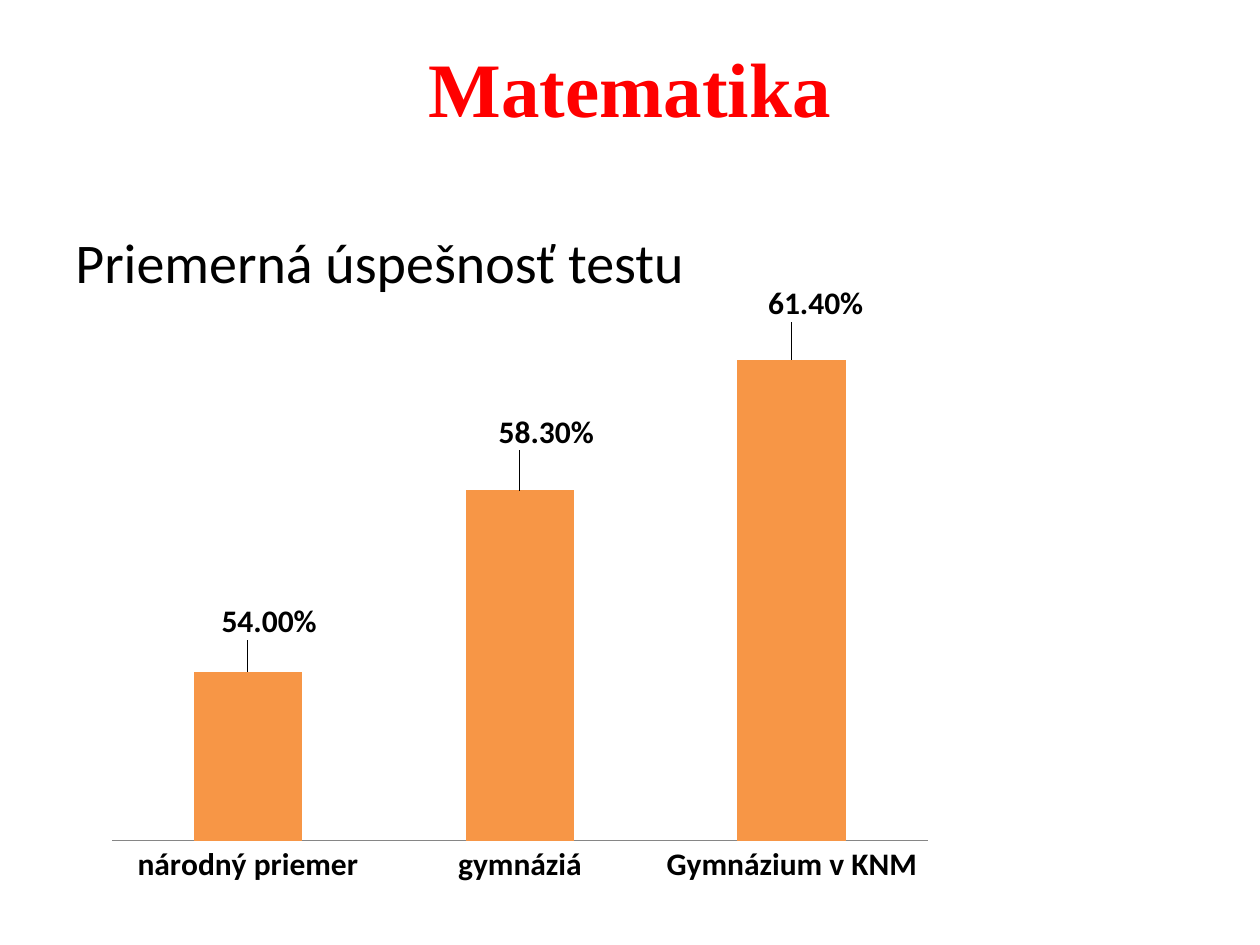
from pptx import Presentation
from pptx.chart.data import CategoryChartData
from pptx.dml.color import RGBColor
from pptx.enum.chart import XL_CHART_TYPE as Kind, XL_LABEL_POSITION as Pos, XL_TICK_MARK as Tick
from pptx.enum.text import MSO_ANCHOR as Anchor, PP_ALIGN as Align
from pptx.oxml import parse_xml
from pptx.oxml.ns import nsdecls, qn
from pptx.util import Pt

PX = 914400 // 126
FORMAT = "0.00%"


def px(*sizes):
    return [size * PX for size in sizes]


def ink(code):
    return RGBColor.from_string(code)


def style(font, name, size, color, bold=False):
    font.name, font.size, font.bold = name, Pt(size), bold
    font.color.rgb = ink(color)


def text(slide, box, words, name, size, color, bold=False,
         align=Align.LEFT, anchor=Anchor.TOP, top=6):
    frame = slide.shapes.add_textbox(*px(*box)).text_frame
    frame.word_wrap = True
    frame.vertical_anchor = anchor
    frame.margin_top = top * PX
    para = frame.paragraphs[0]
    para.text, para.alignment = words, align
    style(para.font, name, size, color, bold)


def layout(x, y, size=None):
    """Manual chart layout; a size makes it the inner plot area."""
    parts = [("x", x), ("y", y)]
    if size:
        parts = [("layoutTarget", "inner"), ("xMode", "edge"),
                 ("yMode", "edge"), *parts, ("w", size[0]), ("h", size[1])]
    body = "".join(f'<c:{tag} val="{val}"/>' for tag, val in parts)
    return parse_xml(f'<c:layout {nsdecls("c")}><c:manualLayout>{body}'
                     '</c:manualLayout></c:layout>')


def label(series, index, shift, box):
    """Value label moved by shift from the end of its bar."""
    mark = series.points[index].data_label
    mark.position = Pos.OUTSIDE_END
    style(mark.font, "Calibri", 18, "000000", True)
    node = series.data_labels._element.findall(qn("c:dLbl"))[index]
    node.insert(1, layout(round(shift[0] / box[2], 3), round(shift[1] / box[3], 3)))
    node.insert(2, parse_xml(f'<c:numFmt {nsdecls("c")} formatCode="{FORMAT}" '
                             'sourceLinked="0"/>'))


def bars(slide, box):
    data = CategoryChartData(number_format=FORMAT)
    data.categories = ["národný priemer", "gymnáziá", "Gymnázium v KNM"]
    data.add_series("Series 1", [0.54, 0.583, 0.614])
    chart = slide.shapes.add_chart(Kind.COLUMN_CLUSTERED, *px(*box), data).chart
    chart.has_legend = chart.has_title = False
    style(chart.font, "Calibri", 10, "000000")

    area = chart._chartSpace.chart.plotArea
    for old in area.findall(qn("c:layout")):
        area.remove(old)
    area.insert(0, layout(0.02, 0.08, (0.96, 0.834)))

    cats, vals = chart.category_axis, chart.value_axis
    cats.major_tick_mark = Tick.NONE
    cats.format.line.color.rgb = ink("868686")
    style(cats.tick_labels.font, "Calibri", 18, "000000", True)
    vals.visible = vals.has_major_gridlines = False
    vals.minimum_scale, vals.maximum_scale = 0.5, 0.62

    plot = chart.plots[0]
    plot.gap_width, plot.vary_by_categories = 150, False
    series = plot.series[0]
    series.format.fill.solid()
    series.format.fill.fore_color.rgb = ink("F79646")
    marks = series.data_labels
    marks.show_value = True
    marks.number_format, marks.number_format_is_linked = FORMAT, False
    style(marks.font, "Calibri", 18, "000000", True)
    for index, shift in enumerate([(21, -27), (26, -35), (24, -33)]):
        label(series, index, shift, box)


def main():
    deck = Presentation()
    deck.slide_width, deck.slide_height = px(1260, 945)
    slide = deck.slides.add_slide(deck.slide_layouts[6])
    text(slide, (63, 38, 1134, 98), "Matematika", "Times New Roman", 44,
         "FF0000", True, Align.CENTER, Anchor.MIDDLE)
    text(slide, (63, 147, 1134, 697), "Priemerná úspešnosť testu",
         "Calibri", 32, "000000", top=81)
    bars(slide, (95, 284, 850, 609))
    deck.save("out.pptx")


if __name__ == "__main__":
    main()
